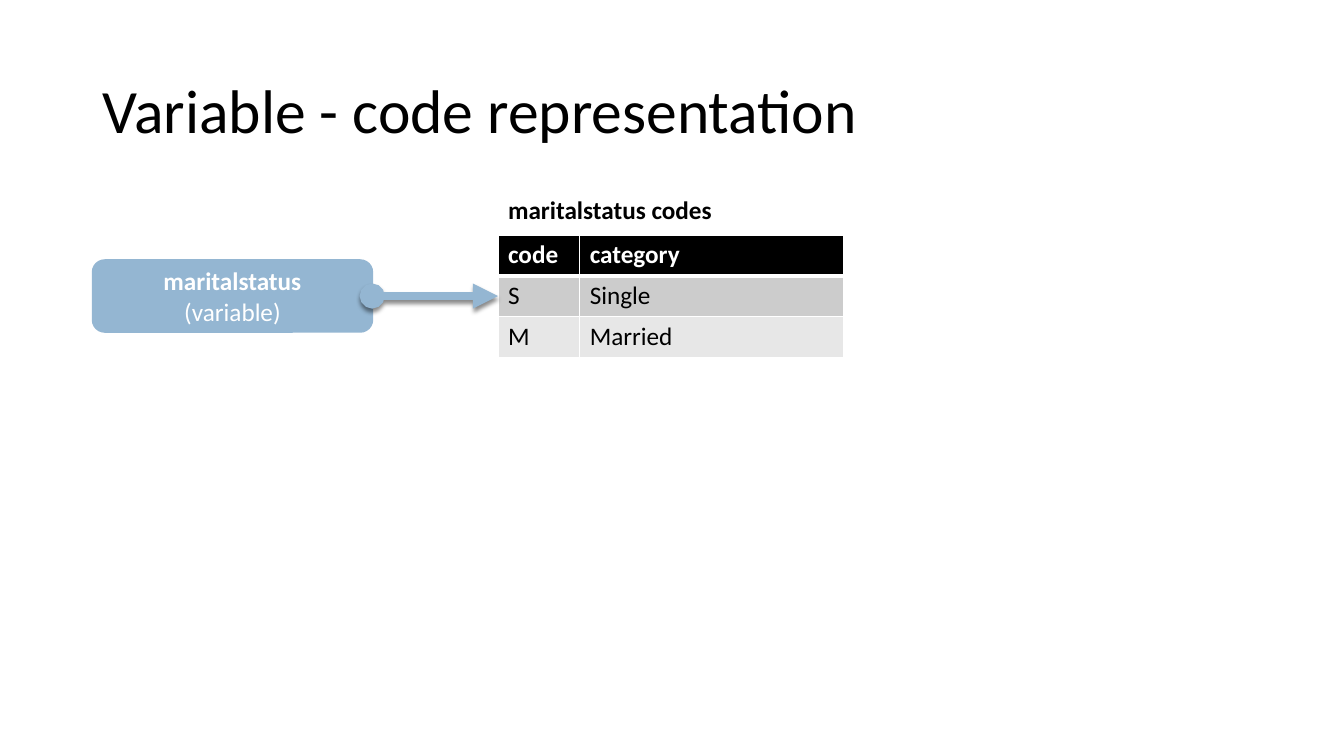
"""Build a slide that links a variable to its table of codes."""
import dataclasses

import pptx
import pptx.dml.color
import pptx.enum.shapes
import pptx.enum.text
import pptx.oxml
import pptx.oxml.ns
import pptx.util

Cm = pptx.util.Cm
Pt = pptx.util.Pt
RGB = pptx.dml.color.RGBColor.from_string
SHAPE = pptx.enum.shapes.MSO_SHAPE
LINK = pptx.enum.shapes.MSO_CONNECTOR
ALIGN = pptx.enum.text.PP_ALIGN
MIDDLE = pptx.enum.text.MSO_ANCHOR.MIDDLE


@dataclasses.dataclass(frozen=True)
class Theme:
    font: str = "Calibri"
    title: int = 44
    body: int = 18
    dark: str = "000000"
    light: str = "FFFFFF"
    blue: str = "94B6D2"
    bands: tuple = ("CCCCCC", "E7E7E7")
    thin: float = 0.96
    thick: float = 3


THEME = Theme()


def node(tag, body="", **attrs):
    space = pptx.oxml.ns.nsdecls("a")
    pairs = "".join(f' {key}="{value}"' for key, value in attrs.items())
    return pptx.oxml.parse_xml(f"<a:{tag} {space}{pairs}>{body}</a:{tag}>")


def write(para, text, size=THEME.body, color=THEME.dark, bold=False):
    run = para.add_run()
    run.text = text
    run.font.name = THEME.font
    run.font.size = Pt(size)
    run.font.bold = bold
    run.font.color.rgb = RGB(color)


def add_title(slide, text):
    box = slide.shapes.add_textbox(Cm(2.34), Cm(1.02), Cm(29.21), Cm(3.68))
    frame = box.text_frame
    frame.word_wrap = True
    frame.vertical_anchor = MIDDLE
    para = frame.paragraphs[0]
    para.line_spacing = 0.9
    write(para, text, size=THEME.title)


def add_edges(cell, top, bottom):
    paint = f'<a:solidFill><a:srgbClr val="{THEME.light}"/></a:solidFill>'
    widths = {"L": THEME.thin, "R": THEME.thin, "T": top, "B": bottom}
    props = cell._tc.get_or_add_tcPr()
    for side, width in widths.items():
        props.append(node("ln" + side, paint, w=int(Pt(width))))


def add_grid(slide, left, top, widths, rows, fills, inks):
    """Draw a table whose first row is a bold heading."""
    high = Cm(1.03)
    frame = slide.shapes.add_table(
        len(rows), len(widths), left, top, sum(widths), high * len(rows))
    grid = frame.table
    grid.first_row = grid.horz_banding = False
    for col, width in zip(grid.columns, widths):
        col.width = width
    for r, (row, fill, ink) in enumerate(zip(rows, fills, inks)):
        grid.rows[r].height = high
        for c, text in enumerate(row):
            cell = grid.cell(r, c)
            add_edges(cell, THEME.thick if r == 1 else THEME.thin,
                      THEME.thick if r == 0 else THEME.thin)
            if fill:
                cell.fill.solid()
                cell.fill.fore_color.rgb = RGB(fill)
            else:
                cell.fill.background()
            write(cell.text_frame.paragraphs[0], text, color=ink, bold=r == 0)


def add_box(slide, name, kind):
    box = slide.shapes.add_shape(
        SHAPE.ROUNDED_RECTANGLE, Cm(2.34), Cm(6.56), Cm(7.04), Cm(1.8))
    box.shadow.inherit = False
    box.fill.solid()
    box.fill.fore_color.rgb = RGB(THEME.blue)
    box.line.color.rgb = RGB(THEME.blue)
    box.line.width = Pt(1.5)
    frame = box.text_frame
    frame.word_wrap = True
    frame.vertical_anchor = MIDDLE
    para = frame.paragraphs[0]
    para.alignment = ALIGN.CENTER
    write(para, name, color=THEME.light, bold=True)
    para.add_line_break()
    write(para, kind, color=THEME.light)
    return box


def add_arrow(slide, box, right):
    mid = box.top + box.height // 2
    arrow = slide.shapes.add_connector(
        LINK.STRAIGHT, box.left + box.width, mid, right, mid)
    arrow.begin_connect(box, 3)
    arrow.line.color.rgb = RGB(THEME.blue)
    arrow.line.width = Pt(6)
    line = arrow.line._get_or_add_ln()
    line.append(node("headEnd", type="oval"))
    line.append(node("tailEnd", type="triangle"))
    shade = (f'<a:outerShdw blurRad="{int(Pt(3))}" dist="{int(Pt(2.4))}" '
             f'dir="5400000" rotWithShape="0"><a:srgbClr val="{THEME.dark}">'
             '<a:alpha val="45000"/></a:srgbClr></a:outerShdw>')
    arrow._element.spPr.append(node("effectLst", shade))


def main():
    deck = pptx.Presentation()
    deck.slide_width, deck.slide_height = Cm(33.87), Cm(19.05)
    slide = deck.slides.add_slide(deck.slide_layouts[6])
    left = Cm(12.55)
    add_title(slide, "Variable - code representation")
    add_grid(slide, left, Cm(5.92), (Cm(2.06), Cm(6.65)),
             (("code", "category"), ("S", "Single"), ("M", "Married")),
             (THEME.dark, *THEME.bands),
             (THEME.light, THEME.dark, THEME.dark))
    add_grid(slide, left, Cm(4.8), (Cm(7.29),),
             (("maritalstatus codes",),), (None,), (THEME.dark,))
    box = add_box(slide, "maritalstatus", "(variable)")
    add_arrow(slide, box, left)
    deck.save("out.pptx")


if __name__ == "__main__":
    main()
